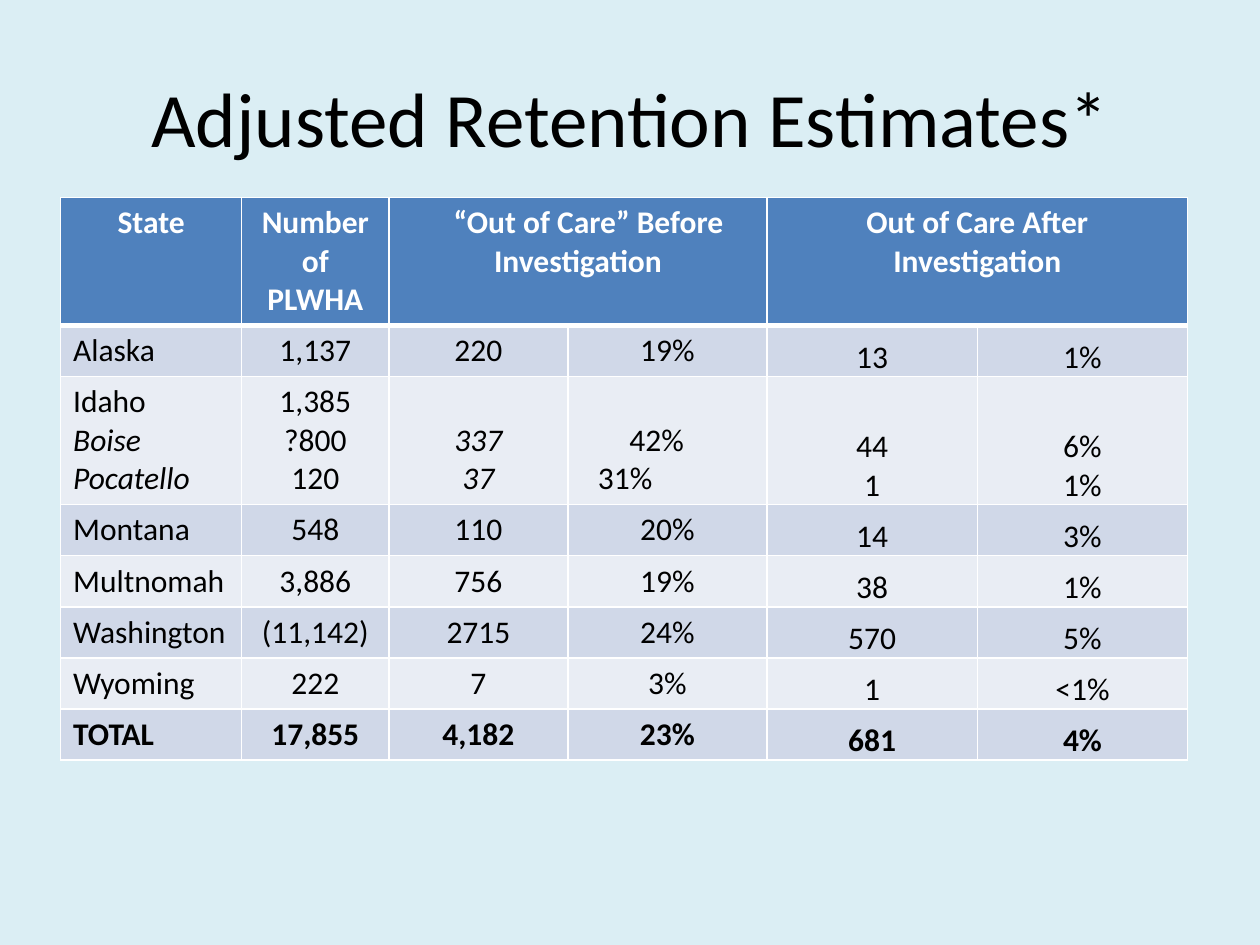
from lxml import etree
from pptx import Presentation
from pptx.dml.color import RGBColor
from pptx.enum import text as txt
from pptx.oxml import ns
from pptx.util import Pt

HUES = {"back": "DBEEF4", "head": "4F81BD", "dark": "D0D8E8",
        "light": "E9EDF4", "white": "FFFFFF", "black": "000000"}
LEFT, MID = txt.PP_ALIGN.LEFT, txt.PP_ALIGN.CENTER
LOW, TOP = txt.MSO_ANCHOR.BOTTOM, txt.MSO_ANCHOR.TOP

ROWS = [
    ["State", "Number of PLWHA", "“Out of Care” Before Investigation", "",
     "Out of Care After Investigation", ""],
    ["Alaska", "1,137", "220", "19%", "13", "1%"],
    ["Idaho\nBoise\nPocatello", "1,385\n?800\n120", "337\n37", "42%\n31%",
     "44\n1", "6%\n1%"],
    ["Montana", "548", "110", "20%", "14", "3%"],
    ["Multnomah", "3,886", "756", "19%", "38", "1%"],
    ["Washington", "(11,142)", "2715", "24%", "570", "5%"],
    ["Wyoming", "222", "7", "3%", "1", "<1%"],
    ["TOTAL", "17,855", "4,182", "23%", "681", "4%"],
]
WIDTHS = [103.5, 84.2, 102.2, 113.8, 120.2, 120.2]
TALL, SHORT = 73.2, 29.2
IDAHO, TOTAL = 2, len(ROWS) - 1
CITIES = {"Boise", "Pocatello", "337", "37"}


def write(frame, words, size=18, hue="black", bold=False, align=MID):
    """Fill a text frame, one paragraph a line, with city entries in italics."""
    frame.text = words
    for para in frame.paragraphs:
        para.alignment = align
        for run in para.runs:
            font = run.font
            font.name, font.size, font.bold = "Calibri", Pt(size), bold
            font.italic = run.text in CITIES
            font.color.rgb = RGBColor.from_string(HUES[hue])


def edge(cell, side, width):
    """Give one side of a cell a white border."""
    line = etree.SubElement(cell._tc.get_or_add_tcPr(), ns.qn("a:ln" + side),
                            w=str(Pt(width)))
    fill = etree.SubElement(line, ns.qn("a:solidFill"))
    etree.SubElement(fill, ns.qn("a:srgbClr"), val=HUES["white"])


deck = Presentation()
deck.slide_width, deck.slide_height = Pt(720), Pt(540)
slide = deck.slides.add_slide(deck.slide_layouts[5])
back = slide.background.fill
back.solid()
back.fore_color.rgb = RGBColor.from_string(HUES["back"])

title = slide.shapes.title
title.left, title.top, title.width, title.height = Pt(36), Pt(21.6), Pt(648), Pt(90)
title.text_frame.vertical_anchor = txt.MSO_ANCHOR.MIDDLE
write(title.text_frame, "Adjusted Retention Estimates*", size=44)

table = slide.shapes.add_table(
    len(ROWS), len(WIDTHS), Pt(34.6), Pt(112.8), Pt(sum(WIDTHS)),
    Pt(2 * TALL + 6 * SHORT)).table
for col, width in zip(table.columns, WIDTHS):
    col.width = Pt(width)

for r, row in enumerate(ROWS):
    table.rows[r].height = Pt(TALL if r in (0, IDAHO) else SHORT)
    shade = "head" if r == 0 else "dark" if r % 2 else "light"
    for c, words in enumerate(row):
        cell = table.cell(r, c)
        write(cell.text_frame, words, hue="black" if r else "white",
              bold=r in (0, TOTAL), align=LEFT if r and c == 0 else MID)
        after = r > 0 and c > 3
        cell.vertical_anchor = LOW if after or (r == IDAHO and c > 1) else TOP
        if after:
            cell.margin_left = cell.margin_right = cell.margin_top = Pt(0.72)
            cell.margin_bottom = 0
        for side in "LRTB":
            thick = (r, side) in ((0, "B"), (1, "T"))
            edge(cell, side, 3 if thick else 1)
        cell.fill.solid()
        cell.fill.fore_color.rgb = RGBColor.from_string(HUES[shade])

for c in (2, 4):
    table.cell(0, c).merge(table.cell(0, c + 1))

# The first header line and the two Idaho shares sit off centre
first = table.cell(0, 2).text_frame.paragraphs[0]
first._p.get_or_add_pPr().set("indent", str(Pt(12)))
for para, inset in zip(table.cell(IDAHO, 3).text_frame.paragraphs, (28, 10)):
    para.alignment = LEFT
    para._p.get_or_add_pPr().set("marL", str(Pt(inset)))

deck.save("out.pptx")
